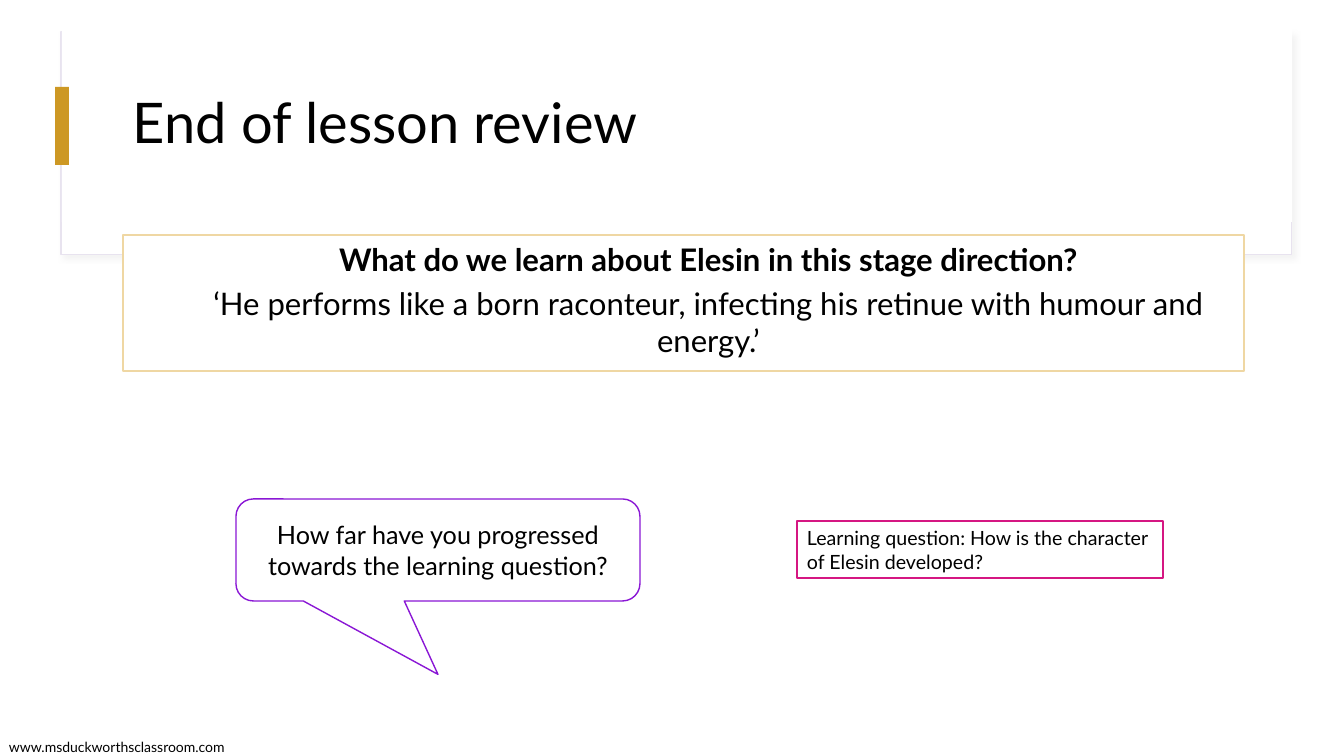
import pptx
import pptx.dml.color
import pptx.enum.shapes
import pptx.enum.text
import pptx.oxml
import pptx.oxml.ns
import pptx.util

RGBColor = pptx.dml.color.RGBColor
MSO_SHAPE = pptx.enum.shapes.MSO_SHAPE
ANCHOR = pptx.enum.text.MSO_ANCHOR
ALIGN = pptx.enum.text.PP_ALIGN

BLACK = RGBColor(0x00, 0x00, 0x00)
WHITE = RGBColor(0xFF, 0xFF, 0xFF)
GOLD = RGBColor(0xCD, 0x98, 0x24)
PALE_GOLD = RGBColor(0xEF, 0xD7, 0xA3)
LILAC = RGBColor(0xE8, 0xE3, 0xEF)
PURPLE = RGBColor(0x8A, 0x17, 0xD5)
PINK = RGBColor(0xD5, 0x17, 0x82)

EMU_PER_PX = pptx.util.Inches(1) / 100.8
SHADOW = (
    f'<a:effectLst {pptx.oxml.ns.nsdecls("a")}>'
    '<a:outerShdw blurRad="50800" dist="38100" dir="2700000">'
    '<a:srgbClr val="D9D9D9"><a:alpha val="30000"/></a:srgbClr>'
    '</a:outerShdw></a:effectLst>'
)


def px(length):
    return pptx.util.Emu(round(length * EMU_PER_PX))


def write(paragraph, text, *, size, font, color=BLACK, bold=False,
          align=ALIGN.LEFT, spacing=None, before=0, indent=0):
    properties = paragraph._p.get_or_add_pPr()
    properties.set("marL", str(px(indent)))
    properties.set("indent", "0")
    paragraph.alignment = align
    paragraph.space_before = pptx.util.Pt(before)
    if spacing:
        paragraph.line_spacing = spacing
    run = paragraph.add_run()
    run.text = text
    run.font.name = font
    run.font.size = pptx.util.Pt(size)
    run.font.bold = bold
    run.font.color.rgb = color


class SlideBuilder:
    def __init__(self, slide, font):
        self.slide = slide
        self.font = font

    def box(self, left, top, width, height, fill=WHITE, line=None,
            weight=1, kind=MSO_SHAPE.RECTANGLE):
        shape = self.slide.shapes.add_shape(
            kind, px(left), px(top), px(width), px(height))
        shape.shadow.inherit = False
        shape.fill.solid()
        shape.fill.fore_color.rgb = fill
        if line is None:
            shape.line.fill.background()
        else:
            shape.line.color.rgb = line
            shape.line.width = pptx.util.Pt(weight)
        return shape

    def shadowed_box(self, *place, **style):
        shape = self.box(*place, **style)
        effects = shape._element.spPr.find(pptx.oxml.ns.qn("a:effectLst"))
        effects.getparent().replace(effects, pptx.oxml.parse_xml(SHADOW))
        return shape

    def callout(self, *place, pointer, **style):
        shape = self.box(
            *place, kind=MSO_SHAPE.ROUNDED_RECTANGULAR_CALLOUT, **style)
        for index, value in enumerate(pointer):
            shape.adjustments[index] = value
        return shape

    def label(self, left, top, width, height):
        return self.slide.shapes.add_textbox(
            px(left), px(top), px(width), px(height))

    def fill_text(self, shape, *texts, anchor=ANCHOR.TOP, wrap=True,
                  before=0, bold_first=False, **style):
        frame = shape.text_frame
        frame.word_wrap = wrap
        frame.vertical_anchor = anchor
        for index, text in enumerate(texts):
            paragraph = frame.add_paragraph() if index else frame.paragraphs[0]
            write(paragraph, text, font=self.font,
                  before=before if index else 0,
                  bold=bold_first and index == 0, **style)


def main():
    presentation = pptx.Presentation()
    presentation.slide_width = px(1344)
    presentation.slide_height = px(756)
    slide = presentation.slides.add_slide(presentation.slide_layouts[6])
    builder = SlideBuilder(slide, "Lato")

    builder.shadowed_box(61, 32, 1231, 223, line=LILAC, weight=0.75)
    builder.box(62, 0, 1230, 222)
    builder.box(55, 87, 14, 78, fill=GOLD)

    website = builder.label(-1, 734, 248, 27)
    builder.fill_text(website, "www.msduckworthsclassroom.com",
                      size=10, wrap=False)

    title = builder.box(123, 60, 1121, 130)
    builder.fill_text(title, "End of lesson review", size=40,
                      spacing=0.9, anchor=ANCHOR.MIDDLE)

    quotation = builder.box(123, 235, 1121, 136, line=PALE_GOLD)
    builder.fill_text(
        quotation,
        "What do we learn about Elesin in this stage direction?",
        "‘He performs like a born raconteur, infecting his retinue "
        "with humour and energy.’",
        size=22.2, align=ALIGN.CENTER, indent=50, before=5, bold_first=True)

    progress = builder.callout(236, 499, 404, 102, line=PURPLE,
                               pointer=(0, 1.22, 0.17))
    builder.fill_text(
        progress, "How far have you progressed towards the learning question?",
        size=18, align=ALIGN.CENTER, anchor=ANCHOR.MIDDLE)

    question = builder.box(797, 521, 366, 57, line=PINK)
    builder.fill_text(
        question, "Learning question: How is the character of Elesin developed?",
        size=14)

    presentation.save("out.pptx")


if __name__ == "__main__":
    main()
